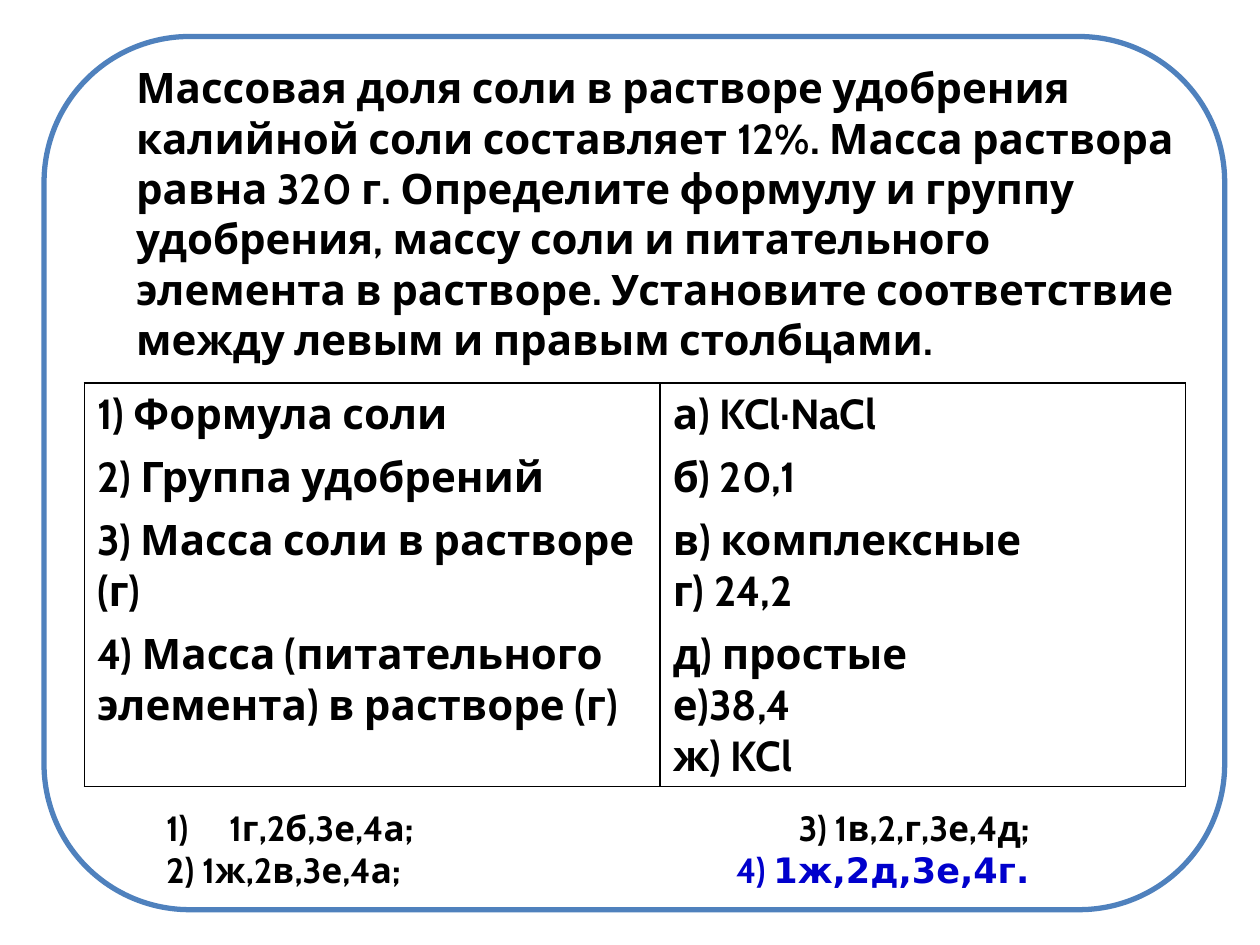
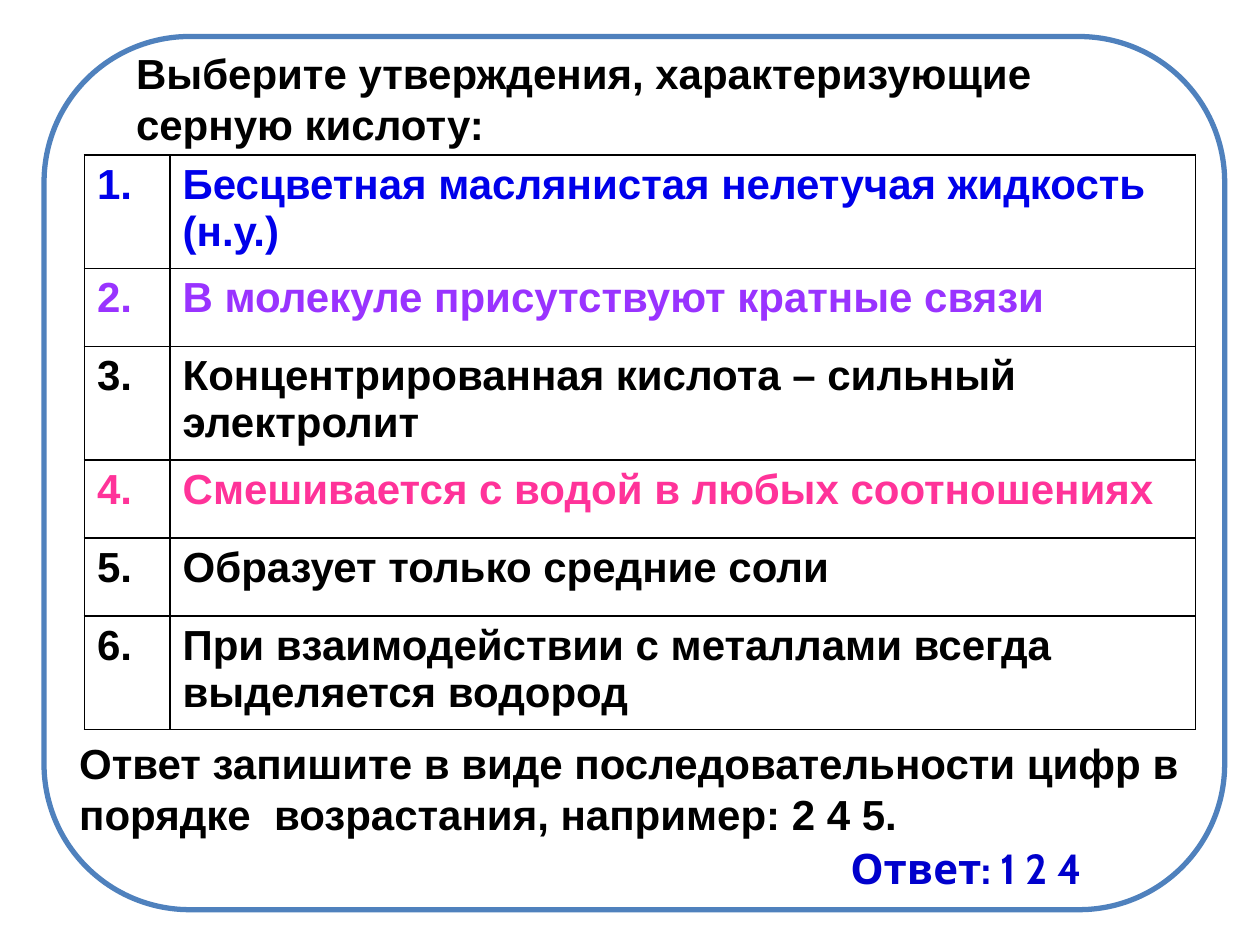
from dataclasses import dataclass

from lxml import etree
from pptx import Presentation
from pptx.dml.color import RGBColor
from pptx.enum.shapes import MSO_SHAPE
from pptx.enum.text import MSO_ANCHOR, MSO_AUTO_SIZE, PP_ALIGN
from pptx.oxml.ns import qn
from pptx.util import Inches, Pt


@dataclass(frozen=True)
class Theme:
    paper: str = "FFFFFF"
    frame: str = "4F81BD"
    ink: str = "000000"
    answer: str = "0000CC"
    blue: str = "0000EA"
    violet: str = "9933FF"
    pink: str = "FF3399"
    round_face: str = "Cabin"
    plain_face: str = "Arial"
    answer_face: str = "DejaVu Sans"
    body: int = 24
    options: int = 20


THEME = Theme()
NO_GRID_STYLE = "{2D5ABB26-0587-4C30-8999-92F81FD0307C}"
ALL_SIDES = "LRTB"


def add_run(paragraph, text, face, color=THEME.ink, size=THEME.body):
    run = paragraph.add_run()
    run.text = text
    run.font.name = face
    run.font.size = Pt(size)
    run.font.bold = True
    run.font.color.rgb = RGBColor.from_string(color)


def add_frame(slide):
    """Put the translucent rounded frame behind everything else."""
    frame = slide.shapes.add_shape(
        MSO_SHAPE.ROUNDED_RECTANGLE,
        Inches(0.35), Inches(0.29), Inches(9.37), Inches(6.93))
    frame.shadow.inherit = False
    frame.fill.solid()
    frame.fill.fore_color.rgb = RGBColor.from_string(THEME.paper)
    fill_color = frame._element.spPr.find(qn("a:solidFill"))[0]
    etree.SubElement(fill_color, qn("a:alpha"), val="75000")
    frame.line.color.rgb = RGBColor.from_string(THEME.frame)
    frame.line.width = Pt(3)
    slide.shapes._spTree.insert(2, frame._element)


def set_title(slide, text, face, box):
    title = slide.shapes.title
    title.left, title.top, title.width, title.height = map(Inches, box)
    text_frame = title.text_frame
    text_frame.word_wrap = True
    text_frame.auto_size = MSO_AUTO_SIZE.NONE
    text_frame.vertical_anchor = MSO_ANCHOR.TOP
    paragraph = text_frame.paragraphs[0]
    paragraph.alignment = PP_ALIGN.LEFT
    add_run(paragraph, text, face)


def add_task_slide(deck, task, face, box):
    slide = deck.slides.add_slide(deck.slide_layouts[5])
    add_frame(slide)
    set_title(slide, task, face, box)
    return slide


def add_text(slide, box):
    text_frame = slide.shapes.add_textbox(*map(Inches, box)).text_frame
    text_frame.word_wrap = True
    return text_frame


def set_borders(cell, sides):
    properties = cell._tc.get_or_add_tcPr()
    drawn = [side for side in ALL_SIDES if side in sides]
    for position, side in enumerate(drawn):
        line = etree.Element(qn(f"a:ln{side}"), w=str(Pt(1)))
        fill = etree.SubElement(line, qn("a:solidFill"))
        etree.SubElement(fill, qn("a:srgbClr"), val=THEME.ink)
        properties.insert(position, line)


def fill_cell(cell, lines, face, color, sides):
    cell.fill.background()
    set_borders(cell, sides)
    for index, line in enumerate(lines):
        text_frame = cell.text_frame
        paragraph = text_frame.add_paragraph() if index else text_frame.paragraphs[0]
        add_run(paragraph, line, face, color)


def add_grid(slide, corner, widths, heights):
    size = sum(widths), sum(heights)
    table = slide.shapes.add_table(
        len(heights), len(widths), *map(Inches, corner + size)).table
    table.first_row = table.horz_banding = False
    table._tbl.tblPr.find(qn("a:tableStyleId")).text = NO_GRID_STYLE
    for column, width in zip(table.columns, widths):
        column.width = Inches(width)
    for row, height in zip(table.rows, heights):
        row.height = Inches(height)
    return table


def add_matching_table(slide, pairs):
    """Two columns with an outer border and a divider, but no row lines."""
    table = add_grid(slide, (0.67, 3.04), (4.57, 4.17), (0.5, 0.5, 0.9, 1.3))
    last = len(pairs) - 1
    for index, pair in enumerate(pairs):
        sides = "LR" + "T" * (index == 0) + "B" * (index == last)
        for cell, lines in zip(table.rows[index].cells, pair):
            cell.margin_bottom = Inches(0.03)
            fill_cell(cell, lines, THEME.round_face, THEME.ink, sides)


def add_statement_table(slide, statements):
    heights = (0.9, 0.62, 0.9, 0.62, 0.62, 0.9)
    table = add_grid(slide, (0.67, 1.23), (0.68, 8.14), heights)
    for number, (statement, color) in enumerate(statements, 1):
        for cell, text in zip(table.rows[number - 1].cells, (f"{number}.", statement)):
            fill_cell(cell, [text], THEME.plain_face, color, ALL_SIDES)


def number_paragraph(paragraph, indent):
    properties = paragraph._p.get_or_add_pPr()
    properties.set("marL", str(Inches(indent)))
    properties.set("indent", str(Inches(-indent)))
    etree.SubElement(properties, qn("a:buFont"), typeface=THEME.round_face)
    etree.SubElement(properties, qn("a:buAutoNum"), type="arabicParenR")


def add_options(slide):
    """Options 1 and 2 at the left, 3 and 4 flush right beside them."""
    face, size = THEME.round_face, THEME.options
    left = add_text(slide, (1.22, 6.35, 4, 0.77))
    first, second = left.paragraphs[0], left.add_paragraph()
    number_paragraph(first, 0.5)
    add_run(first, "1г,2б,3е,4а;", face, size=size)
    add_run(second, "2) 1ж,2в,3е,4а;", face, size=size)

    right = add_text(slide, (5.27, 6.35, 3, 0.77))
    third, fourth = right.paragraphs[0], right.add_paragraph()
    third.alignment = fourth.alignment = PP_ALIGN.RIGHT
    add_run(third, "3) 1в,2,г,3е,4д;", face, size=size)
    add_run(fourth, "4) ", face, THEME.answer, size)
    add_run(fourth, "1ж,2д,3е,4г.", THEME.answer_face, THEME.answer, size)


def build_fertilizer_slide(deck):
    task = ("Массовая доля соли в растворе удобрения калийной соли составляет 12%. "
            "Масса раствора равна 320 г. Определите формулу и группу удобрения, "
            "массу соли и питательного элемента в растворе. "
            "Установите соответствие между левым и правым столбцами.")
    slide = add_task_slide(deck, task, THEME.round_face, (0.98, 0.44, 8.66, 2.52))
    add_matching_table(slide, [
        (["1) Формула соли"], ["а) KCl·NaCl"]),
        (["2) Группа удобрений"], ["б) 20,1"]),
        (["3) Масса соли в растворе (г)"], ["в) комплексные", "г) 24,2"]),
        (["4) Масса (питательного элемента) в растворе (г)"],
         ["д) простые", "е)38,4", "ж) KCl"]),
    ])
    add_options(slide)


def build_acid_slide(deck):
    slide = add_task_slide(
        deck, "Выберите утверждения, характеризующие серную кислоту:",
        THEME.plain_face, (0.98, 0.33, 8.35, 0.9))
    add_statement_table(slide, [
        ("Бесцветная маслянистая нелетучая жидкость (н.у.)", THEME.blue),
        ("В молекуле присутствуют кратные связи", THEME.violet),
        ("Концентрированная кислота – сильный электролит", THEME.ink),
        ("Смешивается с водой в любых соотношениях", THEME.pink),
        ("Образует только средние соли", THEME.ink),
        ("При взаимодействии с металлами всегда выделяется водород", THEME.ink),
    ])
    instruction = add_text(slide, (0.53, 5.8, 9.47, 0.91))
    instruction.vertical_anchor = MSO_ANCHOR.MIDDLE
    add_run(instruction.paragraphs[0],
            "Ответ запишите в виде последовательности цифр в порядке  возрастания, "
            "например: 2 4 5.", THEME.plain_face)
    answer = add_text(slide, (6.65, 6.64, 2.93, 0.5))
    add_run(answer.paragraphs[0], "Ответ: 1 2 4", THEME.round_face, THEME.answer)


def main():
    deck = Presentation()
    deck.slide_width, deck.slide_height = Inches(10), Inches(7.5)
    build_fertilizer_slide(deck)
    build_acid_slide(deck)
    deck.save("out.pptx")


if __name__ == "__main__":
    main()
